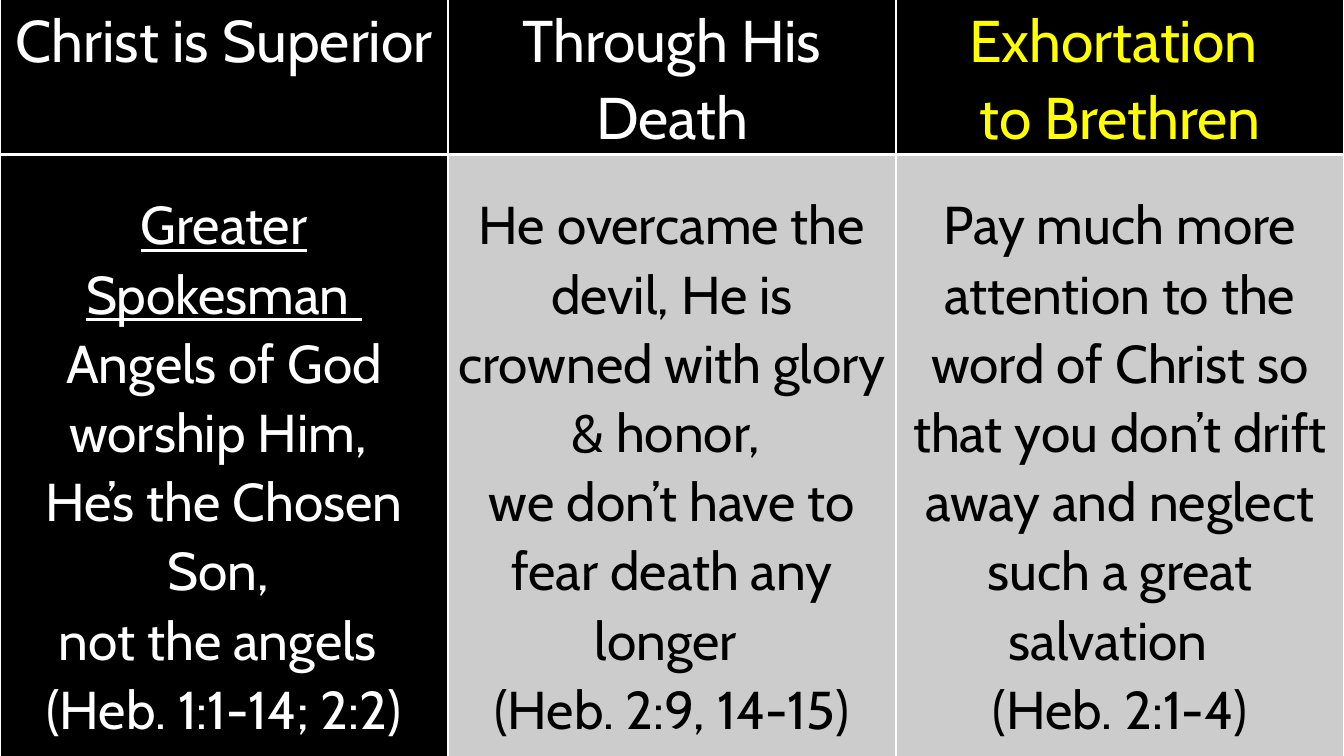
from lxml.etree import SubElement
from pptx import Presentation
from pptx.dml.color import RGBColor
from pptx.enum.text import PP_ALIGN as Align
from pptx.oxml.ns import qn
from pptx.util import Cm, Pt

COLORS = {
    "black": "000000",
    "white": "FFFFFF",
    "yellow": "FFFF00",
    "gray": "CCCCCC",
}
FONT = "Cabin"
SLIDE_WIDTH, SLIDE_HEIGHT = Cm(33.87), Cm(19.05)
TABLE_TOP = Cm(-0.43)
HEADING_HEIGHT, BODY_HEIGHT = Cm(4.29), Cm(15.93)
THIN, THICK = Pt(1), Pt(3)

# Each column: heading, heading colour, body, body colour, body fill
COLUMNS = [
    (["Christ is Superior"], "white",
     ["Greater Spokesman ", "Angels of God worship Him, ",
      "He’s the Chosen Son, ", "not the angels ", "(Heb. 1:1-14; 2:2)"],
     "white", "black"),
    (["Through His Death"], "white",
     ["He overcame the devil, He is crowned with glory & honor, ",
      "we don’t have to fear death any longer ", "(Heb. 2:9, 14-15)"],
     "black", "gray"),
    (["Exhortation ", "to Brethren"], "yellow",
     ["Pay much more attention to the word of Christ so that you don’t "
      "drift away and neglect such a great salvation  ", "(Heb. 2:1-4)"],
     "black", "gray"),
]


def rgb(name):
    return RGBColor.from_string(COLORS[name])


def add_borders(cell, top, bottom):
    """Draw white cell borders; the sides are thin."""
    properties = cell._tc.get_or_add_tcPr()
    for side, width in (("L", THIN), ("R", THIN), ("T", top), ("B", bottom)):
        line = SubElement(properties, qn(f"a:ln{side}"), w=str(width))
        fill = SubElement(line, qn("a:solidFill"))
        SubElement(fill, qn("a:srgbClr"), val=COLORS["white"])


def fill_cell(cell, lines, size, color, background, top_margin):
    cell.fill.solid()
    cell.fill.fore_color.rgb = rgb(background)
    cell.margin_left = cell.margin_right = Cm(0.18)
    cell.margin_top, cell.margin_bottom = top_margin, 0
    cell.text = "\n".join(lines)
    for paragraph in cell.text_frame.paragraphs:
        paragraph.alignment = Align.CENTER
        paragraph.line_spacing = 1.07
        paragraph.font.name = FONT
        paragraph.font.size = Pt(size)
        paragraph.font.bold = False
        paragraph.font.color.rgb = rgb(color)


def add_comparison(slide):
    comparison = slide.shapes.add_table(
        2, len(COLUMNS), 0, TABLE_TOP, SLIDE_WIDTH,
        HEADING_HEIGHT + BODY_HEIGHT).table
    comparison.rows[0].height = HEADING_HEIGHT
    comparison.rows[1].height = BODY_HEIGHT

    for index, (heading, heading_color, body, body_color,
                body_fill) in enumerate(COLUMNS):
        heading_cell = comparison.cell(0, index)
        add_borders(heading_cell, THIN, THICK)
        fill_cell(heading_cell, heading, 42, heading_color, "black", Cm(0.46))

        body_cell = comparison.cell(1, index)
        add_borders(body_cell, THICK, THIN)
        fill_cell(body_cell, body, 38, body_color, body_fill, Cm(0.87))

    # Underlined topic of the first column
    topic = comparison.cell(1, 0).text_frame.paragraphs[0]
    topic.font.underline = True


def main():
    presentation = Presentation()
    presentation.slide_width = SLIDE_WIDTH
    presentation.slide_height = SLIDE_HEIGHT

    # Blank slide on black
    slide = presentation.slides.add_slide(presentation.slide_layouts[6])
    slide.background.fill.solid()
    slide.background.fill.fore_color.rgb = rgb("black")

    add_comparison(slide)
    presentation.save("out.pptx")


if __name__ == "__main__":
    main()
